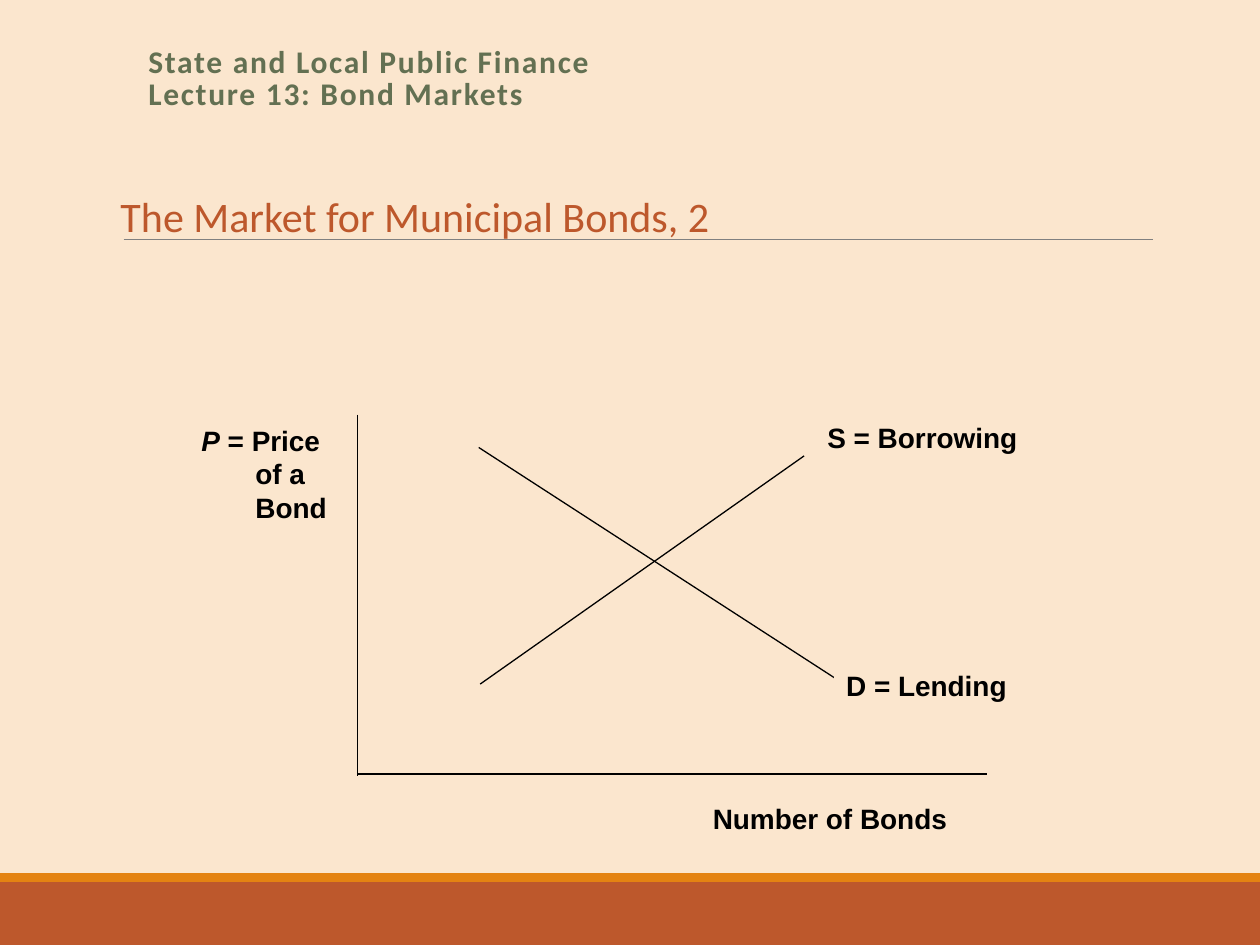
import pptx
import pptx.util
import pptx.dml.color
import pptx.enum.shapes
import pptx.enum.text
import pptx.oxml

Cm = pptx.util.Cm
Pt = pptx.util.Pt

HUES = {
    "sand": "FBE6CE",
    "rust": "BD582C",
    "gold": "E48312",
    "gray": "808080",
    "moss": "637052",
    "ink": "000000",
}


def tint(name):
    return pptx.dml.color.RGBColor.from_string(HUES[name])


class Deck:
    def __init__(self, wide, high):
        self.file = pptx.Presentation()
        self.file.slide_width = Cm(wide)
        self.file.slide_height = Cm(high)
        self.slide = self.file.slides.add_slide(self.file.slide_layouts[6])
        fill = self.slide.background.fill
        fill.solid()
        fill.fore_color.rgb = tint("sand")

    def rect(self, box, hue):
        kind = pptx.enum.shapes.MSO_SHAPE.RECTANGLE
        shape = self.slide.shapes.add_shape(kind, *map(Cm, box))
        shape.shadow.inherit = False
        shape.fill.solid()
        shape.fill.fore_color.rgb = tint(hue)
        shape.line.fill.background()
        return shape

    def line(self, ends, hue="ink", width=0.75):
        kind = pptx.enum.shapes.MSO_CONNECTOR.STRAIGHT
        line = self.slide.shapes.add_connector(kind, *map(Cm, ends))
        line.line.color.rgb = tint(hue)
        line.line.width = Pt(width)
        line._element.spPr.append(pptx.oxml.parse_xml(
            '<a:effectLst xmlns:a='
            '"http://schemas.openxmlformats.org/drawingml/2006/main"/>'))

    def run(self, para, text, size=16, face="Arial", hue="ink",
            bold=True, slant=False, gap=0):
        run = para.add_run()
        run.text = text
        font = run.font
        font.size = Pt(size)
        font.name = face
        font.bold = bold
        font.italic = slant
        font.color.rgb = tint(hue)
        if gap:
            run._r.get_or_add_rPr().set("spc", str(gap * 100))

    def text(self, box, wrap=True):
        frame = self.slide.shapes.add_textbox(*map(Cm, box)).text_frame
        frame.word_wrap = wrap
        return frame

    def label(self, box, text):
        frame = self.rect(box, "sand").text_frame
        frame.word_wrap = True
        frame.vertical_anchor = pptx.enum.text.MSO_ANCHOR.TOP
        para = frame.paragraphs[0]
        para.alignment = pptx.enum.text.PP_ALIGN.LEFT
        self.run(para, text)


def main():
    deck = Deck(25.4, 19.05)
    deck.rect((0, 17.78, 25.4, 1.27), "rust")
    deck.rect((0, 17.6, 25.4, 0.18), "gold")
    deck.line((2.49, 4.82, 23.24, 4.82), "gray", 0.5)

    para = deck.text((2.74, 0.84, 20.96, 1.65)).paragraphs[0]
    para.line_spacing = 0.85
    head = dict(size=18, face="Calibri", hue="moss", gap=1)
    deck.run(para, "State and Local Public Finance", **head)
    para.add_line_break()
    deck.run(para, "Lecture 13: Bond Markets", **head)

    frame = deck.text((2.18, 3.71, 12.62, 1.27), wrap=False)
    frame.auto_size = pptx.enum.text.MSO_AUTO_SIZE.SHAPE_TO_FIT_TEXT
    deck.run(frame.paragraphs[0], "The Market for Municipal Bonds, 2",
             size=24, face="Calibri", hue="rust", bold=False)

    deck.line((7.21, 8.36, 7.21, 15.65))
    deck.line((7.21, 15.6, 19.89, 15.6))
    deck.line((9.65, 9.02, 16.94, 13.74))
    deck.label((16.81, 13.36, 4.6, 1.52), "D = Lending")
    deck.label((14.12, 16.03, 6.53, 1.14), "Number of Bonds")

    frame = deck.text((4.06, 8.41, 2.69, 2.69))
    frame.margin_left = frame.margin_right = 0
    deck.run(frame.paragraphs[0], "P", slant=True)
    deck.run(frame.paragraphs[0], " = Price")
    for word in ("of a", "Bond"):
        para = frame.add_paragraph()
        para._p.get_or_add_pPr().set("marL", str(Cm(1.09)))
        deck.run(para, word)

    deck.line((9.68, 13.79, 16.21, 9.19))
    deck.label((16.43, 8.36, 4.6, 1.52), "S = Borrowing")
    deck.file.save("out.pptx")


if __name__ == "__main__":
    main()
